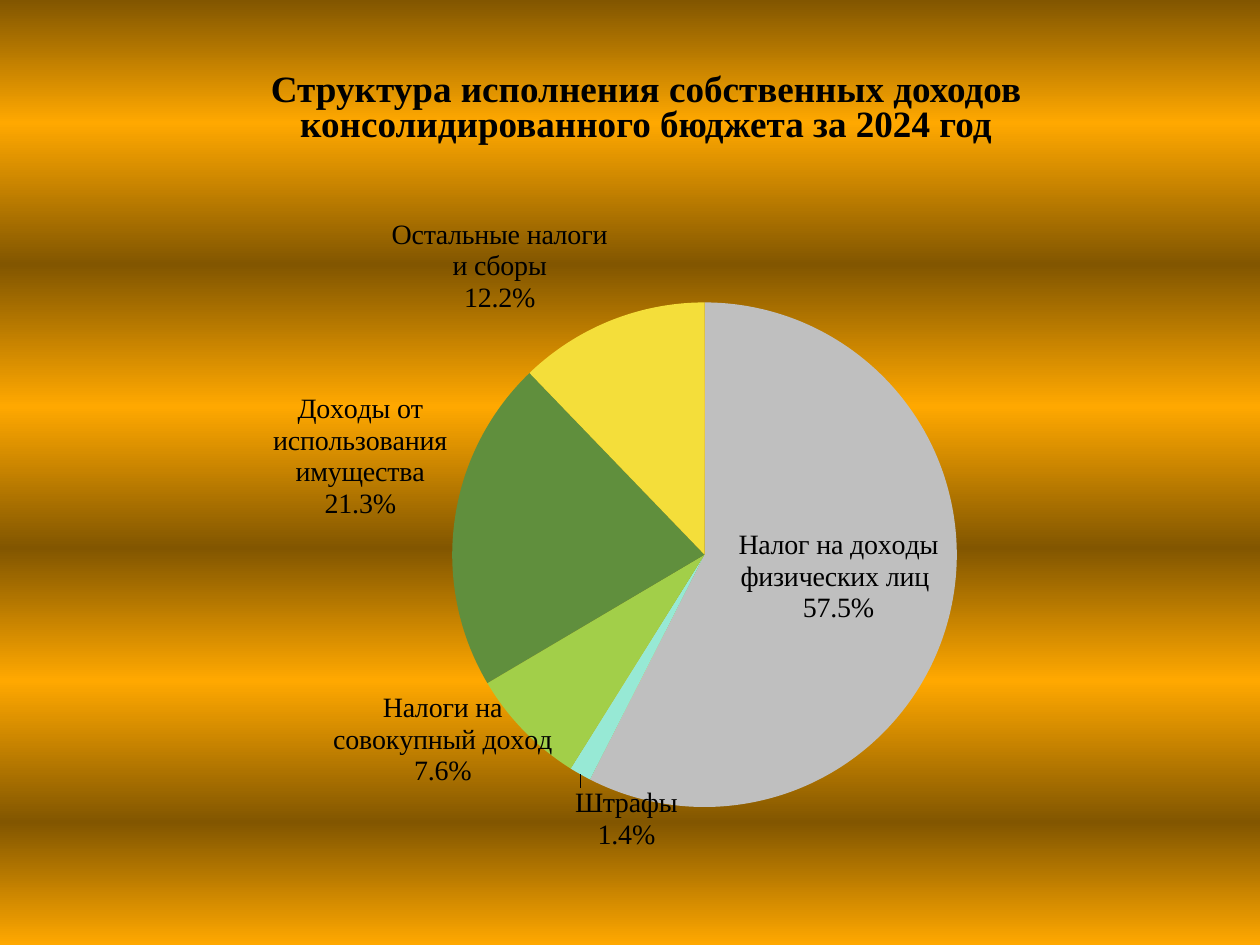
from pptx import Presentation
from pptx.chart.data import CategoryChartData
from pptx.dml.color import RGBColor
from pptx.enum.chart import XL_CHART_TYPE, XL_LABEL_POSITION
from pptx.enum.text import MSO_ANCHOR, PP_ALIGN
from pptx.oxml import parse_xml
from pptx.oxml.ns import nsdecls, qn
from pptx.util import Inches, Pt

PIE = XL_CHART_TYPE.PIE
CENTER_LABEL = XL_LABEL_POSITION.CENTER
OUTSIDE_LABEL = XL_LABEL_POSITION.OUTSIDE_END
BOTTOM = MSO_ANCHOR.BOTTOM
CENTER = PP_ALIGN.CENTER

BLACK = RGBColor(0x00, 0x00, 0x00)
BROWN = RGBColor(0x82, 0x56, 0x00)
ORANGE = RGBColor(0xFF, 0xA8, 0x00)
GRAY = RGBColor(0xBF, 0xBF, 0xBF)
AQUA = RGBColor(0x97, 0xE9, 0xD5)
LIME = RGBColor(0xA2, 0xCF, 0x49)
GREEN = RGBColor(0x60, 0x8F, 0x3D)
YELLOW = RGBColor(0xF4, 0xDE, 0x3A)

FONT = "Times New Roman"
PERCENT_FORMAT = "0.0%"
STRIPE_STOPS = (0, 13, 28, 43, 58, 72, 87, 100)
TITLE_LINES = (
    "Структура исполнения собственных доходов",
    "консолидированного бюджета за 2024 год",
)
INCOME = (
    ("Налог на доходы физических лиц ", 57.5, GRAY),
    ("Штрафы", 1.4, AQUA),
    ("Налоги на совокупный доход", 7.6, LIME),
    ("Доходы от использования имущества", 21.3, GREEN),
    ("Остальные налоги и сборы", 12.2, YELLOW),
)
# Slice index: label position and shift as a share of the chart size
MOVED_LABELS = {
    0: (CENTER_LABEL, 0.01, -0.01),
    1: (OUTSIDE_LABEL, 0.09, 0.01),
    2: (OUTSIDE_LABEL, 0.03, -0.06),
}


def paint_background(slide):
    fill = slide.background.fill
    fill.gradient()
    fill.gradient_angle = 270
    stops = slide.element.find(".//" + qn("a:gsLst"))
    stops.clear()
    for number, percent in enumerate(STRIPE_STOPS):
        color = ORANGE if number % 2 else BROWN
        stops.append(parse_xml(
            f'<a:gs {nsdecls("a")} pos="{percent * 1000}">'
            f'<a:srgbClr val="{color}"/></a:gs>'))


def style_font(font, size):
    font.name = FONT
    font.size = Pt(size)
    font.color.rgb = BLACK


def add_title(slide):
    title = slide.shapes.add_textbox(
        Inches(1.38), Inches(0.68), Inches(7.5), Inches(0.68))
    frame = title.text_frame
    frame.word_wrap = True
    frame.vertical_anchor = BOTTOM
    frame.margin_bottom = Inches(0.21)
    frame.text = "\n".join(TITLE_LINES)
    for line in frame.paragraphs:
        line.alignment = CENTER
        line.line_spacing = 0.8
        font = line.runs[0].font
        style_font(font, 21.2)
        font.bold = True


def manual_layout(x, y, modes="", extent=""):
    return parse_xml(
        f'<c:layout {nsdecls("c")}><c:manualLayout>{modes}'
        f'<c:x val="{x}"/><c:y val="{y}"/>{extent}'
        '</c:manualLayout></c:layout>')


def place_pie(chart):
    plot_area = chart.element.find(".//" + qn("c:plotArea"))
    for old in plot_area.findall(qn("c:layout")):
        plot_area.remove(old)
    modes = ('<c:layoutTarget val="inner"/>'
             '<c:xMode val="edge"/><c:yMode val="edge"/>')
    extent = '<c:w val="0.45"/><c:h val="0.71"/>'
    plot_area.insert(0, manual_layout(0.355, 0.15, modes, extent))


def add_line_break(labels):
    separator = parse_xml(f'<c:separator {nsdecls("c")}>\n</c:separator>')
    labels.find(qn("c:showBubbleSize")).addnext(separator)


def move_label(element, dx, dy):
    for tag, shown in (("showVal", 0), ("showCatName", 1), ("showPercent", 1)):
        element.find(qn("c:" + tag)).set("val", str(shown))
    number_format = parse_xml(
        f'<c:numFmt {nsdecls("c")} formatCode="{PERCENT_FORMAT}" sourceLinked="0"/>')
    element.find(qn("c:idx")).addnext(number_format)
    number_format.addprevious(manual_layout(dx, dy))
    add_line_break(element)


def label_slices(chart):
    series = chart.plots[0].series[0]
    labels = series.data_labels
    labels.show_value = False
    labels.show_category_name = True
    labels.show_percentage = True
    labels.number_format = PERCENT_FORMAT
    labels.number_format_is_linked = False
    labels.position = OUTSIDE_LABEL
    style_font(labels.font, 16)
    add_line_break(chart.element.find(".//" + qn("c:dLbls")))

    for index, (position, _, _) in MOVED_LABELS.items():
        label = series.points[index].data_label
        style_font(label.font, 16)
        label.position = position
    elements = chart.element.findall(".//" + qn("c:dLbl"))
    for element, (_, dx, dy) in zip(elements, MOVED_LABELS.values()):
        move_label(element, dx, dy)


def add_income_pie(slide):
    names, shares, colors = zip(*INCOME)
    data = CategoryChartData()
    data.categories = names
    data.add_series("Series 1", shares)
    chart = slide.shapes.add_chart(
        PIE, Inches(0.43), Inches(1.53), Inches(8.9), Inches(5.69), data).chart
    chart.has_legend = False
    chart.has_title = False
    style_font(chart.font, 18)
    chart.plots[0].vary_by_categories = True
    series = chart.plots[0].series[0]
    for index, color in enumerate(colors):
        slice_format = series.points[index].format
        slice_format.fill.solid()
        slice_format.fill.fore_color.rgb = color
        slice_format.line.fill.background()
    label_slices(chart)
    place_pie(chart)


def main():
    presentation = Presentation()
    presentation.slide_width = Inches(10)
    presentation.slide_height = Inches(7.5)
    slide = presentation.slides.add_slide(presentation.slide_layouts[6])
    paint_background(slide)
    add_title(slide)
    add_income_pie(slide)
    presentation.save("out.pptx")


if __name__ == "__main__":
    main()
